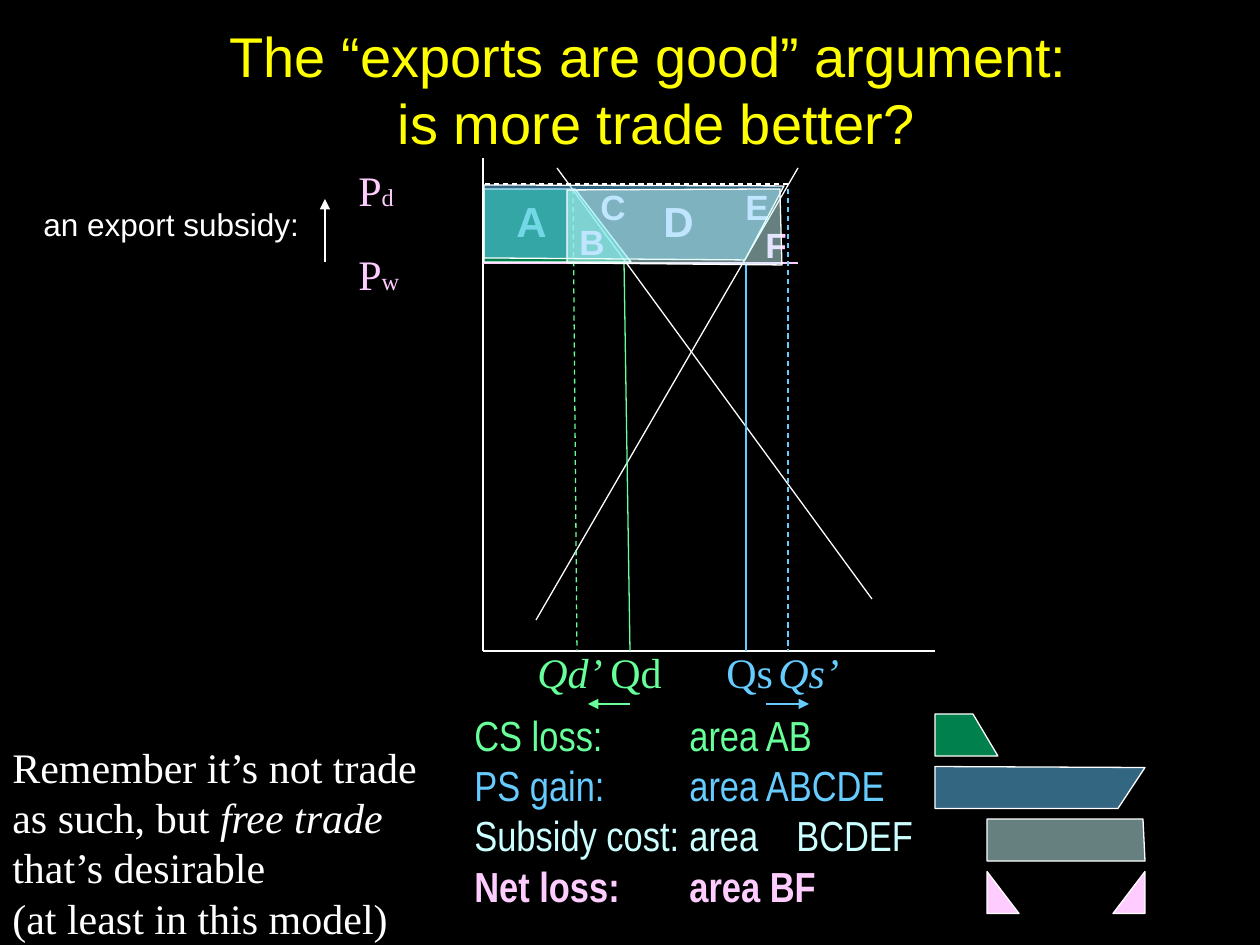
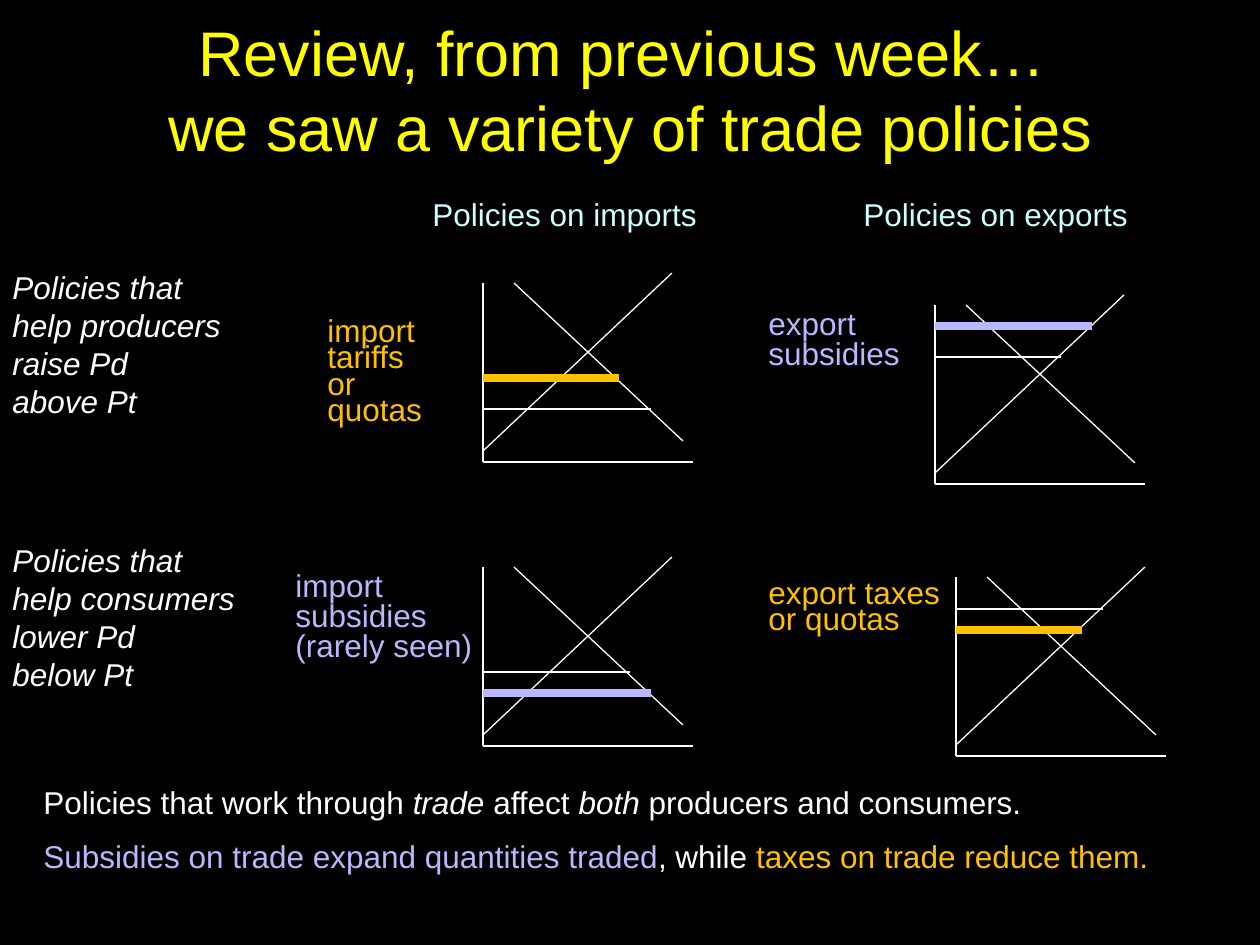
from lxml import etree
from pptx import Presentation
from pptx import util as u
from pptx.dml import color as dc
from pptx.enum import dml, shapes, text
from pptx.oxml import ns

SCALE = 914400 / 126  # EMU per px
HUE = {
    "back": "000000", "title": "FFFF00", "white": "FFFFFF", "pink": "FFCCFF",
    "green": "66FF99", "area": "00FF99", "blue": "66CCFF", "pale": "CCFFFF",
    "tax": "FFC000", "aid": "B8B8FF",
}
SANS, SERIF, SLIM = "Arial", "Times New Roman", "Arial Narrow"


# ---- Shared helpers ----
def emu(n):
    return u.Emu(round(n * SCALE))


def rgb(hue):
    return dc.RGBColor.from_string(HUE[hue])


def sub(parent, tag, **attrs):
    return etree.SubElement(parent, ns.qn(tag), attrs)


def add_run(para, words, size, hue, font, bold=False, ital=False, base=None):
    run = para.add_run()
    run.text = words
    f = run.font
    f.size, f.name, f.bold, f.italic = u.Pt(size), font, bold, ital
    f.color.rgb = rgb(hue)
    if base:
        run._r.get_or_add_rPr().set("baseline", str(base))


def add_text(slide, box, paras, size=18, hue="white", font=SANS, wrap=False,
             gap=None, lead=None, tabs=(), **look):
    """Each paragraph is a string or a list of (words, changes) runs."""
    shape = slide.shapes.add_textbox(*map(emu, box))
    frame = shape.text_frame
    frame.word_wrap = wrap
    frame.auto_size = text.MSO_AUTO_SIZE.SHAPE_TO_FIT_TEXT
    style = dict(size=size, hue=hue, font=font, **look)
    for i, runs in enumerate(paras):
        para = frame.add_paragraph() if i else frame.paragraphs[0]
        if gap:
            para.space_before = u.Pt(gap)
        if lead:
            para.line_spacing = lead
        if tabs:
            stops = sub(para._p.get_or_add_pPr(), "a:tabLst")
            for pos in tabs:
                sub(stops, "a:tab", pos=str(emu(pos)), algn="l")
        if isinstance(runs, str):
            runs = [(runs, {})]
        for words, diff in runs:
            add_run(para, words, **{**style, **diff})


def add_line(slide, org, start, end, hue="white", width=0.75, dash=False, head=False):
    x, y = org
    ends = (x + start[0], y + start[1], x + end[0], y + end[1])
    link = slide.shapes.add_connector(shapes.MSO_CONNECTOR.STRAIGHT, *map(emu, ends))
    link.line.color.rgb = rgb(hue)
    link.line.width = u.Pt(width)
    if dash:
        link.line.dash_style = dml.MSO_LINE.DASH
    if head:
        sub(link.line._get_or_add_ln(), "a:tailEnd", type="triangle")
    sub(link._element.spPr, "a:effectLst")


def paint(shape, hue, alpha=None):
    shape.shadow.inherit = False
    shape.fill.solid()
    shape.fill.fore_color.rgb = rgb(hue)
    shape.line.color.rgb = rgb("white")
    shape.line.width = u.Pt(0.75)
    if alpha:
        tone = shape._element.spPr.find(ns.qn("a:solidFill"))[0]
        sub(tone, "a:alpha", val=str(alpha * 1000))


def add_area(slide, org, points, hue):
    pts = [(emu(org[0] + x), emu(org[1] + y)) for x, y in points]
    form = slide.shapes.build_freeform(*pts[0])
    form.add_line_segments(pts[1:], close=True)
    paint(form.convert_to_shape(), hue, 50)


def add_slide(prs, box, lines, size):
    slide = prs.slides.add_slide(prs.slide_layouts[5])
    title = slide.shapes.title
    title.left, title.top, title.width, title.height = map(emu, box)
    frame = title.text_frame
    frame.word_wrap = True
    frame.auto_size = text.MSO_AUTO_SIZE.NONE
    frame.vertical_anchor = text.MSO_ANCHOR.MIDDLE
    para = frame.paragraphs[0]
    para.alignment = text.PP_ALIGN.CENTER
    for i, words in enumerate(lines):
        if i:
            para.add_line_break()
        add_run(para, words, size, "title", SANS)
    return slide


# ---- Export subsidy slide ----
def draw_market(slide, x, y):
    org = (x, y)

    def letters(rows):
        for name, dx, dy, size in rows:
            add_text(slide, (x + dx, y + dy, 2 * size + 8, 2 * size + 14), [name],
                     size, "pink", bold=True)

    # Axes, supply, demand and world price
    add_line(slide, org, (0, 0), (0, 493))
    add_line(slide, org, (0, 493), (452, 493))
    add_line(slide, org, (53, 462), (315, 10))
    add_line(slide, org, (74, 10), (389, 441))
    add_line(slide, org, (0, 105), (315, 105), "pink")
    add_line(slide, org, (305, 26), (1, 26), dash=True)
    # Quantities, before and after
    add_line(slide, org, (141, 103), (147, 493), "green")
    add_line(slide, org, (263, 105), (263, 493), "blue")
    add_line(slide, org, (305, 31), (305, 493), "blue", dash=True)
    add_line(slide, org, (90, 31), (94, 493), "green", dash=True)
    add_line(slide, org, (283, 546), (326, 546), "blue", head=True)
    add_line(slide, org, (147, 546), (105, 546), "green", head=True)
    for name, dx, w, hue, ital in [
            ("Qs", 231, 72, "blue", False), ("Qd", 115, 77, "green", False),
            ("Qd’", 42, 91, "green", True), ("Qs’", 283, 86, "blue", True)]:
        add_text(slide, (x + dx, y + 482, w, 63), [name], 24, hue, SERIF, ital=ital)
    # Welfare areas laid over their letters
    letters([("A", 21, 31, 24), ("D", 168, 31, 24), ("E", 250, 21, 20)])
    add_area(slide, org, [(1, 31), (92, 31), (148, 104), (1, 104)], "area")
    letters([("C", 105, 21, 20), ("B", 84, 56, 20), ("F", 270, 59, 20)])
    add_area(slide, org, [(1, 27), (301, 28), (262, 102), (1, 100)], "blue")
    add_area(slide, org, [(84, 32), (297, 31), (299, 107), (84, 105)], "pale")


def draw_prices(slide, x, y):
    for mark, dy in [("d", 0), ("w", 84)]:
        add_text(slide, (x + 315, y + dy, 66, 63), [[("P", {}), (mark, {"base": -25})]],
                 24, "pink", SERIF)
    add_line(slide, (x, y), (294, 104), (294, 41), head=True)
    add_text(slide, (x, y + 41, 346, 50), ["an export subsidy:"], wrap=True, gap=9)


def draw_tally(slide, x, y):
    rows = [("CS loss:\tarea AB", "green", False), ("PS gain:\tarea ABCDE", "blue", False),
            ("Subsidy cost:\tarea\tBCDEF", "pale", False), ("Net loss:\tarea BF", "pink", True)]
    add_text(slide, (x, y, 483, 214),
             [[(words, {"hue": hue, "bold": bold})] for words, hue, bold in rows],
             24, font=SLIM, wrap=True, tabs=(215, 322))


def draw_key(slide, x, y):
    step = 52.5
    bars = [("area", [(0, 0), (38, 0), (63, 42), (0, 42)]),
            ("blue", [(0, 0), (210, 1), (183, 42), (0, 42)]),
            ("pale", [(52, 0), (208, 0), (210, 42), (52, 42)])]
    for i, (hue, points) in enumerate(bars):
        add_area(slide, (x, y + i * step), points, hue)
    # Net loss: two facing triangles
    for dx, flip in [(52, False), (178, True)]:
        tri = slide.shapes.add_shape(shapes.MSO_SHAPE.RIGHT_TRIANGLE,
                                     *map(emu, (x + dx, y + 3 * step, 32, 42)))
        paint(tri, "pink")
        if flip:
            tri._element.spPr.find(ns.qn("a:xfrm")).set("flipH", "1")


def make_subsidy(prs):
    slide = add_slide(prs, (53, 42, 1207, 94),
                      ["The “exports are good” argument: ", "is more trade better?"], 32)
    draw_market(slide, 483, 158)
    draw_prices(slide, 31, 158)
    draw_tally(slide, 462, 703)
    draw_key(slide, 935, 714)
    add_text(slide, (0, 735, 451, 214),
             [[("Remember it’s not trade as such, but ", {}), ("free trade", {"ital": True}),
               (" that’s desirable", {})], "(at least in this model)"],
             24, font=SERIF, wrap=True)


# ---- Review slide ----
def draw_graph(slide, x, y, world, home, hue):
    """world and home give (height, length) of the two price lines."""
    org = (x, y)
    add_line(slide, org, (0, 0), (0, 179))
    add_line(slide, org, (0, 179), (210, 179))
    add_line(slide, org, (0, 168), (189, -10))
    add_line(slide, org, (31, 0), (200, 158))
    for (dy, size), tint, width in [(world, "white", 1), (home, hue, 4.5)]:
        add_line(slide, org, (0, dy), (size, dy), tint, width)


def make_review(prs):
    slide = add_slide(prs, (95, 10, 1071, 158),
                      ["Review, from previous week… ", "we saw a variety of trade policies"], 36)
    # Column and row heads
    for x, side in [(420, "imports"), (851, "exports")]:
        add_text(slide, (x, 189, 347, 63), [f"Policies on {side}"], hue="pale")
    for y, w, who, verb, rel in [(262, 315, "producers", "raise", "above"),
                                 (535, 273, "consumers", "lower", "below")]:
        add_text(slide, (0, y, w, 165),
                 ["Policies that", f"help {who}", f"{verb} Pd", f"{rel} Pt"],
                 wrap=True, ital=True)
    # Four policy graphs
    draw_graph(slide, 483, 283, (126, 168), (95, 136), "tax")
    draw_graph(slide, 935, 305, (52, 126), (21, 157), "aid")
    draw_graph(slide, 483, 567, (105, 147), (126, 168), "aid")
    draw_graph(slide, 956, 577, (32, 147), (53, 126), "tax")
    # Policy names
    for box, lines, hue, lead in [
            ((315, 315, 122, 120), ["import", "tariffs", "or", "quotas"], "tax", 0.7),
            ((756, 305, 210, 74), ["export", "subsidies"], "aid", 0.8),
            ((283, 567, 210, 105), ["import", "subsidies", "(rarely seen)"], "aid", 0.8),
            ((756, 577, 220, 67), ["export taxes or quotas"], "tax", 0.7)]:
        add_text(slide, box, lines, hue=hue, lead=lead, wrap=True)
    # Summary
    ital = {"ital": True}
    add_text(slide, (31, 777, 1134, 108),
             [[("Policies that work through ", {}), ("trade", ital), (" affect ", {}),
               ("both", ital), (" producers and consumers.", {})],
              [("Subsidies on trade expand quantities traded", {"hue": "aid"}),
               (", while ", {}), ("taxes on trade reduce them.", {"hue": "tax"})]],
             wrap=True, gap=9)


def main():
    prs = Presentation()
    prs.slide_width, prs.slide_height = emu(1260), emu(945)
    fill = prs.slide_master.background.fill
    fill.solid()
    fill.fore_color.rgb = rgb("back")
    make_subsidy(prs)
    make_review(prs)
    prs.save("out.pptx")


if __name__ == "__main__":
    main()
